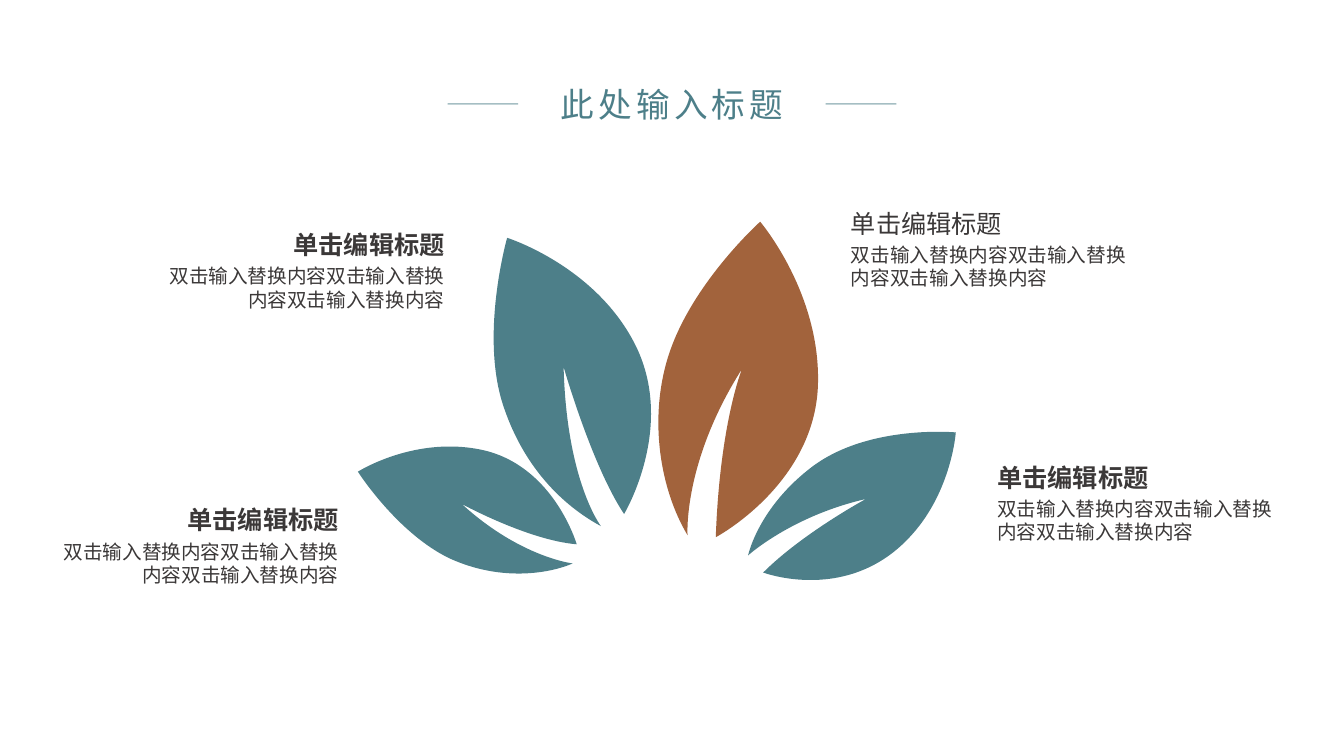
import pptx
import pptx.util
import pptx.dml.color
import pptx.enum.shapes
import pptx.enum.text
import pptx.oxml.ns
import lxml.etree

FONT = "Noto Sans CJK SC"
TEAL, BROWN, DARK = "4D7F89", "A2633C", "3B3838"
inch = pptx.util.Inches
align = pptx.enum.text.PP_ALIGN
qn = pptx.oxml.ns.qn


def rgb(value):
    return pptx.dml.color.RGBColor.from_string(value)


def add_run(p, text, size, color, line, bold=False):
    p.line_spacing = pptx.util.Pt(line)
    r = p.add_run()
    r.text = text
    r.font.size = pptx.util.Pt(size)
    r.font.bold = bold
    r.font.color.rgb = rgb(color)
    r.font.name = FONT
    lxml.etree.SubElement(r.font._element, qn("a:ea"), typeface=FONT)
    return r


prs = pptx.Presentation()
prs.slide_width, prs.slide_height = inch(13.33), inch(7.5)
s = prs.slides.add_slide(prs.slide_layouts[6])

leaves = [
    (TEAL, (757, 568), [
        (757, 568), (842, 600), (904, 531),
        (944, 487), (948, 429), (948, 429),
        (948, 429), (863, 421), (807, 462),
        (752, 503), (742, 551), (742, 551),
        (742, 551), (785, 512), (859, 495),
        (859, 495), (796, 529), (757, 568)]),
    (BROWN, (710, 533), [
        (710, 533), (804, 483), (811, 388),
        (817, 294), (754, 220), (754, 220),
        (754, 220), (686, 281), (663, 353),
        (643, 416), (655, 486), (682, 531),
        (682, 531), (677, 459), (736, 366),
        (736, 366), (714, 420), (710, 533)]),
    (TEAL, (619, 510), [
        (619, 510), (670, 425), (631, 344),
        (592, 264), (503, 236), (503, 236),
        (503, 236), (475, 334), (500, 405),
        (524, 475), (570, 508), (596, 522),
        (596, 522), (562, 478), (559, 364),
        (559, 364), (587, 462), (619, 510)]),
    (TEAL, (572, 540), [
        (572, 540), (550, 464), (481, 447),
        (413, 431), (355, 468), (355, 468),
        (355, 468), (394, 529), (446, 554),
        (501, 579), (550, 567), (568, 559),
        (568, 559), (516, 553), (458, 500),
        (458, 500), (524, 536), (572, 540)]),
]
for color, start, points in leaves:
    builder = s.shapes.build_freeform(*start, scale=inch(0.01))
    builder.add_line_segments(points, close=True)
    sp = builder.convert_to_shape()
    segments = list(sp._element.iter(qn("a:lnTo")))
    for i in range(0, len(segments), 3):
        curve = lxml.etree.Element(qn("a:cubicBezTo"))
        segments[i].addprevious(curve)
        for segment in segments[i:i + 3]:
            curve.append(segment[0])
            segment.getparent().remove(segment)
    sp.shadow.inherit = False
    sp.fill.solid()
    sp.fill.fore_color.rgb = rgb(color)
    sp.line.fill.background()

captions = [
    (8.44, 2.07, 2.77, align.LEFT, False),
    (9.89, 4.59, 2.88, align.LEFT, True),
    (1.61, 2.28, 2.8, align.RIGHT, True),
    (0.56, 5.01, 2.8, align.RIGHT, True),
]
for left, top, width, side, bold in captions:
    tf = s.shapes.add_textbox(inch(left), inch(top), inch(width), inch(0.82)).text_frame
    tf.word_wrap = True
    tf.margin_left = tf.margin_right = tf.margin_top = tf.margin_bottom = 0
    p = tf.paragraphs[0]
    p.alignment = side
    add_run(p, "单击编辑标题", 18, DARK, 21.4, bold)
    p = tf.add_paragraph()
    p.alignment = side
    p.space_before = pptx.util.Pt(3.4)
    add_run(p, "双击输入替换内容" * 3, 14, DARK, 16.6)

for left in (4.44, 8.19):
    rule = s.shapes.add_connector(pptx.enum.shapes.MSO_CONNECTOR.STRAIGHT,
                                  inch(left), inch(1.03), inch(left + 0.7), inch(1.03))
    rule.line.width = pptx.util.Pt(1)
    rule.line.color.rgb = rgb(TEAL)
    lxml.etree.SubElement(next(rule._element.iter(qn("a:srgbClr"))), qn("a:alpha"), val="50000")
    lxml.etree.SubElement(rule._element.spPr, qn("a:effectLst"))

tf = s.shapes.add_textbox(inch(5.19), inch(0.78), inch(2.95), inch(0.5)).text_frame
tf.word_wrap = True
p = tf.paragraphs[0]
p.alignment = align.CENTER
r = add_run(p, "此处输入标题", 24, TEAL, 29)
r.font._element.set("spc", "300")

prs.save("out.pptx")
